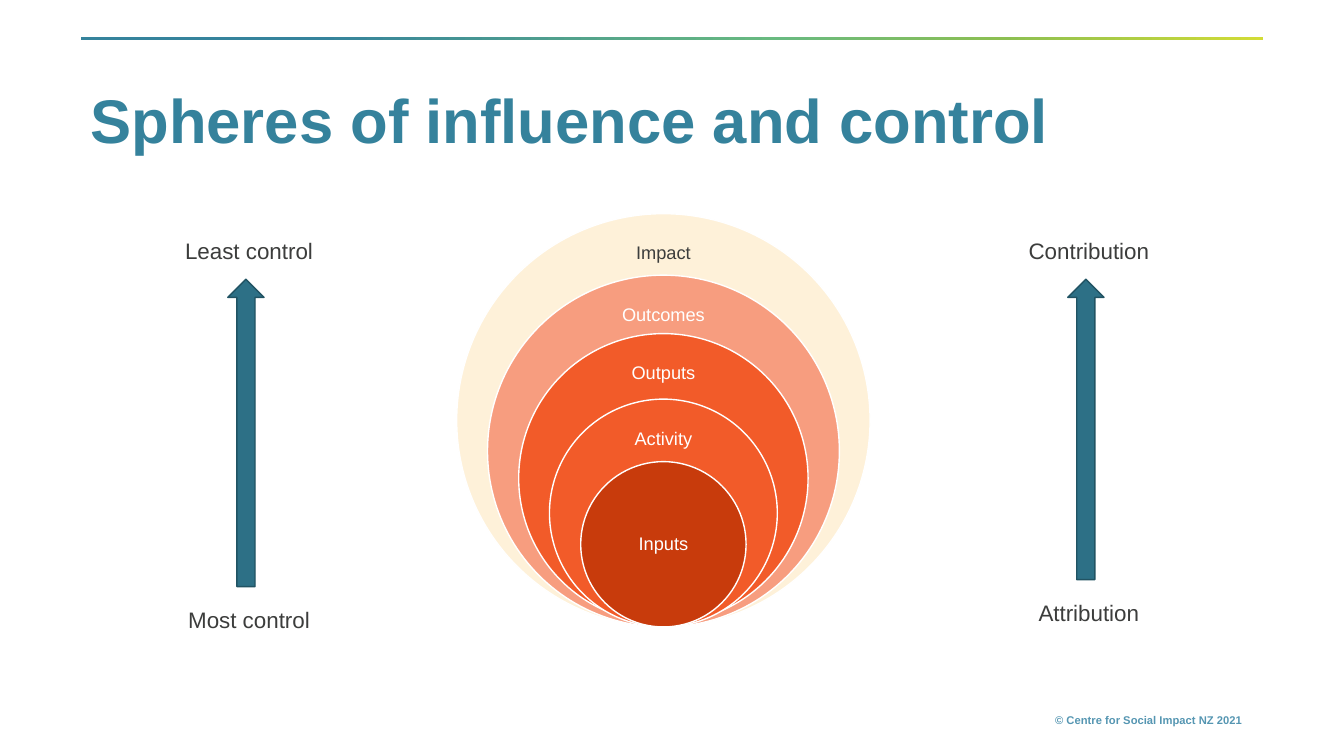
from lxml import etree
from pptx import Presentation
from pptx.dml.color import RGBColor
from pptx.enum.shapes import MSO_SHAPE as Shape
from pptx.enum.text import MSO_ANCHOR as Anchor, PP_ALIGN as Align
from pptx.oxml.ns import qn
from pptx.util import Inches, Pt

WIDTH, HEIGHT = 13.33, 7.5
MARGIN = 0.06 * WIDTH
CONTENT_WIDTH = 0.88 * WIDTH
DARK, WHITE = "3C3D3C", "FFFFFF"
RULE_STOPS = [(0, "35839C"), (20, "35839C"), (59, "69BA80"), (78, "8CBF52"), (100, "D2DC36")]
# label, top, diameter, fill, label colour
SPHERES = [
    ("Impact", 2.12, 4.1, "FEF1D9", DARK),
    ("Outcomes", 2.73, 3.49, "F79D7F", WHITE),
    ("Outputs", 3.31, 2.87, "F25B29", WHITE),
    ("Activity", 3.96, 2.26, "F25B29", WHITE),
    ("Inputs", 4.58, 1.64, "C83B0C", WHITE),
]


def color(hex_value):
    return RGBColor.from_string(hex_value)


def add_text(slide, text, box, size, hex_value=DARK, align=Align.CENTER,
             anchor=Anchor.TOP, bold=False, spacing=1.0, wrap=True):
    shape = slide.shapes.add_textbox(*map(Inches, box))
    frame = shape.text_frame
    frame.word_wrap, frame.vertical_anchor = wrap, anchor
    paragraph = frame.paragraphs[0]
    paragraph.text, paragraph.alignment, paragraph.line_spacing = text, align, spacing
    font = paragraph.runs[0].font
    for name, value in {"name": "Arial", "size": Pt(size), "bold": bold}.items():
        setattr(font, name, value)
    font.color.rgb = color(hex_value)


def add_filled(slide, kind, box, fill, line):
    shape = slide.shapes.add_shape(kind, *map(Inches, box))
    shape.shadow.inherit = False
    shape.fill.solid()
    shape.fill.fore_color.rgb = color(fill)
    shape.line.color.rgb = color(line)
    shape.line.width = Pt(1)
    return shape


def add_rule(slide, box):
    """Draw the thin gradient bar above the title."""
    rule = slide.shapes.add_shape(Shape.RECTANGLE, *map(Inches, box))
    rule.shadow.inherit = False
    rule.line.fill.background()
    rule.fill.gradient()
    rule.fill.gradient_angle = 0
    stops = rule.element.spPr.find(qn("a:gradFill")).find(qn("a:gsLst"))
    for stop in list(stops):
        stops.remove(stop)
    for percent, hex_value in RULE_STOPS:
        stop = etree.SubElement(stops, qn("a:gs"), pos=str(percent * 1000))
        etree.SubElement(stop, qn("a:srgbClr"), val=hex_value)


def add_spheres(slide, center):
    """Nest the circles on one vertical axis; the innermost label is centred."""
    label_width, label_height = 1.54, 0.4
    for label, top, diameter, fill, text_color in SPHERES:
        add_filled(slide, Shape.OVAL, (center - diameter / 2, top, diameter, diameter),
                   fill, WHITE)
        innermost = label == SPHERES[-1][0]
        label_top = top + (diameter - label_height) / 2 if innermost else top + 0.2
        add_text(slide, label, (center - label_width / 2, label_top, label_width, label_height),
                 13, text_color, anchor=Anchor.MIDDLE, spacing=0.9)


def add_scale(slide, box, upper, lower):
    """Place an upward arrow in the box, with a label above and one below."""
    left, top, width, height = box
    add_filled(slide, Shape.UP_ARROW, box, "2D7086", "215363")
    label_width, label_height = 1.5, 0.37
    label_left = left + (width - label_width) / 2 + 0.03
    for text, label_top in ((upper, top - 0.47), (lower, top + height + 0.14)):
        add_text(slide, text, (label_left, label_top, label_width, label_height), 16, wrap=False)


def main():
    presentation = Presentation()
    presentation.slide_width, presentation.slide_height = Inches(WIDTH), Inches(HEIGHT)
    slide = presentation.slides.add_slide(presentation.slide_layouts[6])
    add_rule(slide, (MARGIN, 0.37, CONTENT_WIDTH, 0.03))
    add_text(slide, "Spheres of influence and control", (MARGIN, 0.77, CONTENT_WIDTH, 0.92),
             44, "35829C", Align.LEFT, Anchor.MIDDLE, True, 0.9)
    add_spheres(slide, 6.58)
    add_scale(slide, (2.26, 2.77, 0.36, 3.05), "Least control", "Most control")
    add_scale(slide, (10.59, 2.77, 0.36, 2.98), "Contribution", "Attribution")
    add_text(slide, "© Centre for Social Impact NZ 2021", (8.89, 7.03, 3.53, 0.24),
             8, "5596B2", Align.RIGHT, bold=True)
    presentation.save("out.pptx")


if __name__ == "__main__":
    main()
